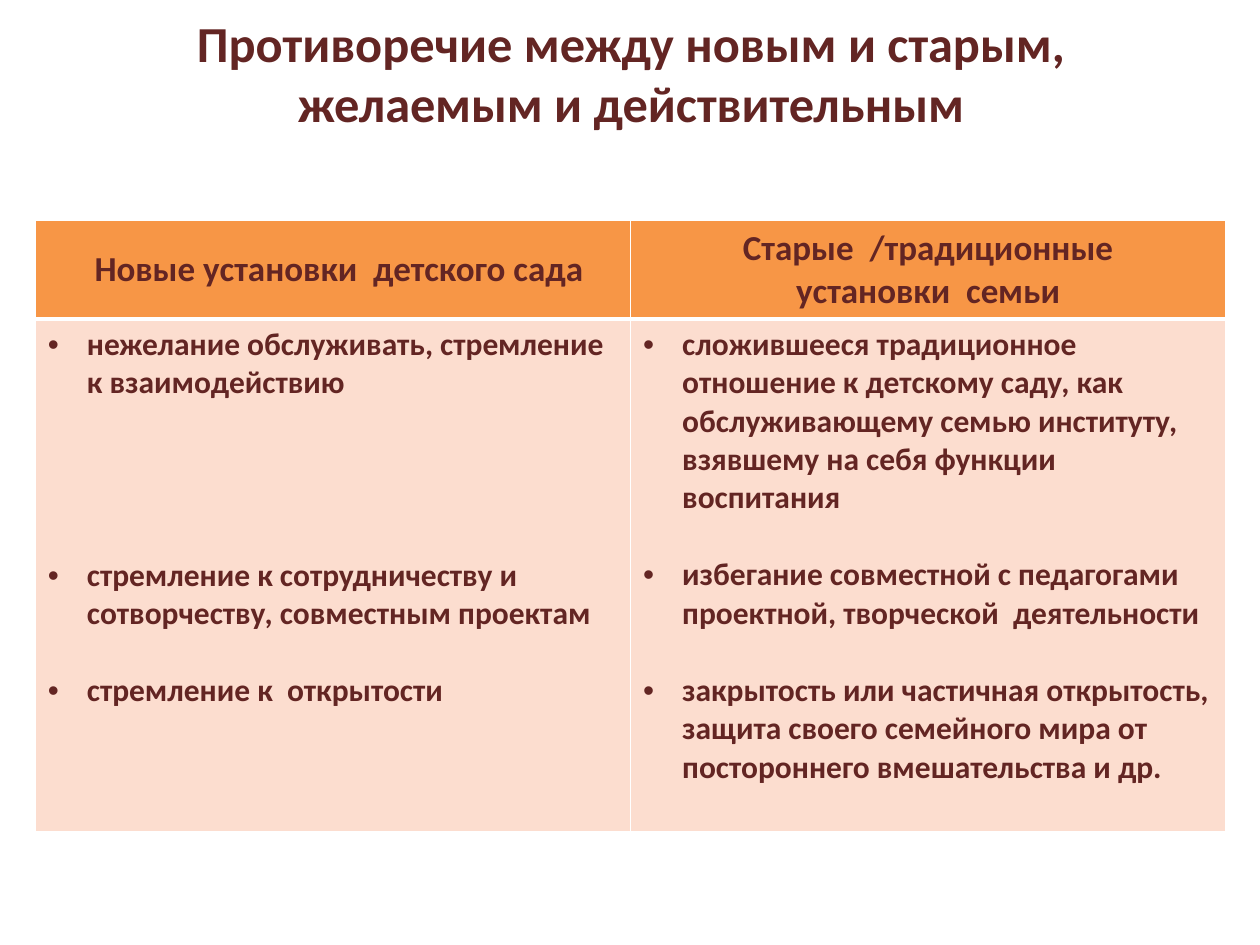
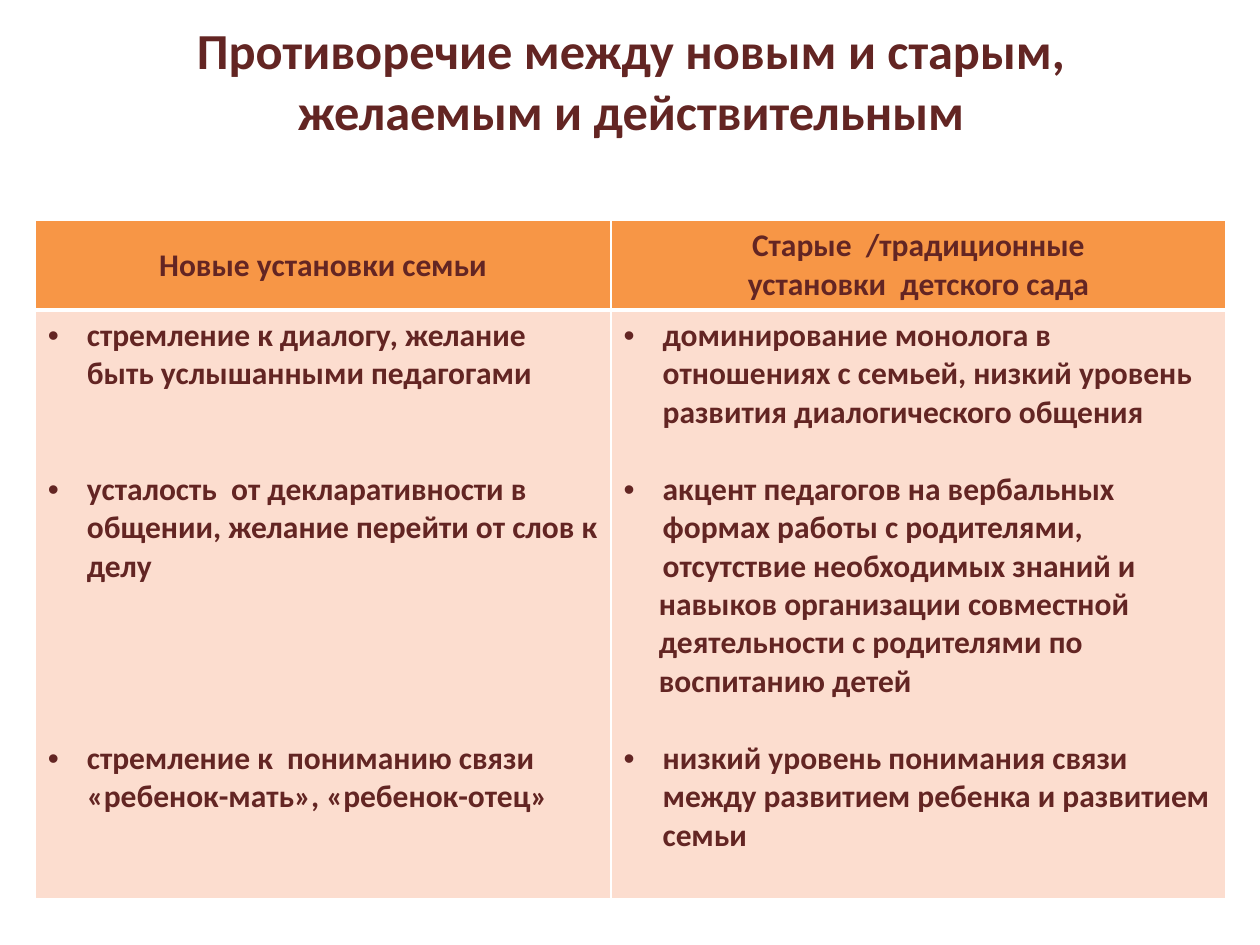
from dataclasses import dataclass

from lxml.etree import SubElement
from pptx import Presentation
from pptx.dml.color import RGBColor
from pptx.enum.text import MSO_ANCHOR, MSO_AUTO_SIZE, PP_ALIGN
from pptx.oxml import parse_xml
from pptx.oxml.ns import nsdecls, qn
from pptx.util import Inches, Pt

COLORS = {"text": "632523", "header": "F79646", "body": "FCDDCF", "border": "FFFFFF"}
FONT = "Calibri"
TITLE = "Противоречие между новым и старым, желаемым и действительным"
TITLE_SIZE = 28.8
BODY_SIZE = 18
BLANK_LINE = 22
BULLET_INDENT = 0.31
CONTINUATION_INDENT = 0.28
TABLE_LEFT, TABLE_TOP, TABLE_WIDTH = 0.28, 1.75, 9.45


@dataclass(frozen=True)
class Point:
    text: str
    lines_before: int = 0
    bullet: bool = True


@dataclass(frozen=True)
class Column:
    width: float
    heading: tuple[str, ...]
    points: tuple[Point, ...]
    heading_indent: float | None = None


@dataclass(frozen=True)
class Comparison:
    title_top: float
    title_height: float
    heading_size: float
    row_heights: tuple[float, float]
    columns: tuple[Column, Column]


COMPARISONS = (
    Comparison(0, 1.15, 20, (0.77, 4.07), (
        Column(TABLE_WIDTH / 2, ("Новые установки  детского сада",), (
            Point("нежелание обслуживать, стремление к взаимодействию"),
            Point("стремление к сотрудничеству и сотворчеству, совместным проектам", 4),
            Point("стремление к  открытости", 1),
        ), heading_indent=0.37),
        Column(TABLE_WIDTH / 2, ("Старые  /традиционные", "установки  семьи"), (
            Point("сложившееся традиционное отношение к детскому саду, как "
                  "обслуживающему семью институту, взявшему на себя функции воспитания"),
            Point("избегание совместной с педагогами проектной, творческой  деятельности", 1),
            Point("закрытость или частичная открытость, защита своего семейного мира "
                  "от постороннего вмешательства и др.", 1),
        )),
    )),
    Comparison(0.21, 0.85, 18, (0.71, 4.67), (
        Column(4.57, ("Новые установки семьи",), (
            Point("стремление к диалогу, желание быть услышанными педагогами"),
            Point("усталость  от декларативности в общении, желание перейти от слов к делу", 2),
            Point("стремление к  пониманию связи «ребенок-мать», «ребенок-отец»", 4),
        )),
        Column(4.88, ("Старые  /традиционные", "установки  детского сада"), (
            Point("доминирование монолога в отношениях с семьей, низкий уровень "
                  "развития диалогического общения"),
            Point("акцент педагогов на вербальных формах работы с родителями, "
                  "отсутствие необходимых знаний и", 1),
            Point("навыков организации совместной", bullet=False),
            Point("деятельности с родителями по", bullet=False),
            Point("воспитанию детей", bullet=False),
            Point("низкий уровень понимания связи между развитием ребенка "
                  "и развитием семьи", 1),
        )),
    )),
)


def add_run(paragraph, text: str, size: float) -> None:
    """Append a bold run in the shared text style."""
    run = paragraph.add_run()
    run.text = text
    run.font.name = FONT
    run.font.size = Pt(size)
    run.font.bold = True
    run.font.color.rgb = RGBColor.from_string(COLORS["text"])


def next_paragraph(frame, index: int):
    """Return the first paragraph of a frame or a newly added one."""
    return frame.add_paragraph() if index else frame.paragraphs[0]


def indent(paragraph, left: float, first: float = 0) -> None:
    """Set the left margin and first-line indent of a paragraph."""
    properties = paragraph._p.get_or_add_pPr()
    properties.set("marL", str(Inches(left)))
    properties.set("indent", str(Inches(first)))


def style_cell(cell, fill: str, bottom_width: float) -> None:
    """Fill a cell and give it white borders."""
    cell.fill.solid()
    cell.fill.fore_color.rgb = RGBColor.from_string(COLORS[fill])
    properties = cell._tc.get_or_add_tcPr()
    widths = {"lnL": 1, "lnR": 1, "lnT": 1, "lnB": bottom_width}
    for position, (side, width) in enumerate(widths.items()):
        properties.insert(position, parse_xml(
            f'<a:{side} {nsdecls("a")} w="{Pt(width)}"><a:solidFill>'
            f'<a:srgbClr val="{COLORS["border"]}"/></a:solidFill></a:{side}>'))


def write_heading(cell, column: Column, size: float) -> None:
    """Write the heading lines of a column."""
    style_cell(cell, "header", 3)
    cell.vertical_anchor = MSO_ANCHOR.MIDDLE
    for index, line in enumerate(column.heading):
        paragraph = next_paragraph(cell.text_frame, index)
        if column.heading_indent is None:
            paragraph.alignment = PP_ALIGN.CENTER
        else:
            indent(paragraph, column.heading_indent)
        add_run(paragraph, line, size)


def write_points(cell, points: tuple[Point, ...]) -> None:
    """Write the bulleted points of a column."""
    style_cell(cell, "body", 1)
    for index, point in enumerate(points):
        paragraph = next_paragraph(cell.text_frame, index)
        if point.bullet:
            indent(paragraph, BULLET_INDENT, -BULLET_INDENT)
            properties = paragraph._p.get_or_add_pPr()
            SubElement(properties, qn("a:buFont"), typeface="Arial")
            SubElement(properties, qn("a:buChar"), char="•")
        else:
            indent(paragraph, CONTINUATION_INDENT)
        if point.lines_before:
            paragraph.space_before = Pt(point.lines_before * BLANK_LINE)
        add_run(paragraph, point.text, BODY_SIZE)


def write_title(title, comparison: Comparison) -> None:
    """Place and fill the title placeholder."""
    title.left, title.top = Inches(0.51), Inches(comparison.title_top)
    title.width, title.height = Inches(9), Inches(comparison.title_height)
    frame = title.text_frame
    frame.auto_size = MSO_AUTO_SIZE.NONE
    frame.word_wrap = True
    frame.vertical_anchor = MSO_ANCHOR.MIDDLE
    frame.paragraphs[0].alignment = PP_ALIGN.CENTER
    add_run(frame.paragraphs[0], TITLE, TITLE_SIZE)


def add_comparison(presentation, comparison: Comparison) -> None:
    """Add a slide with a title and a two-column comparison table."""
    slide = presentation.slides.add_slide(presentation.slide_layouts[5])
    write_title(slide.shapes.title, comparison)
    table = slide.shapes.add_table(
        2, len(comparison.columns), Inches(TABLE_LEFT), Inches(TABLE_TOP),
        Inches(TABLE_WIDTH), Inches(sum(comparison.row_heights))).table
    for row, height in zip(table.rows, comparison.row_heights):
        row.height = Inches(height)
    for index, column in enumerate(comparison.columns):
        table.columns[index].width = Inches(column.width)
        write_heading(table.cell(0, index), column, comparison.heading_size)
        write_points(table.cell(1, index), column.points)


def main() -> None:
    """Build and save the presentation."""
    presentation = Presentation()
    presentation.slide_width, presentation.slide_height = Inches(10), Inches(7.5)
    for comparison in COMPARISONS:
        add_comparison(presentation, comparison)
    presentation.save("out.pptx")


if __name__ == "__main__":
    main()
